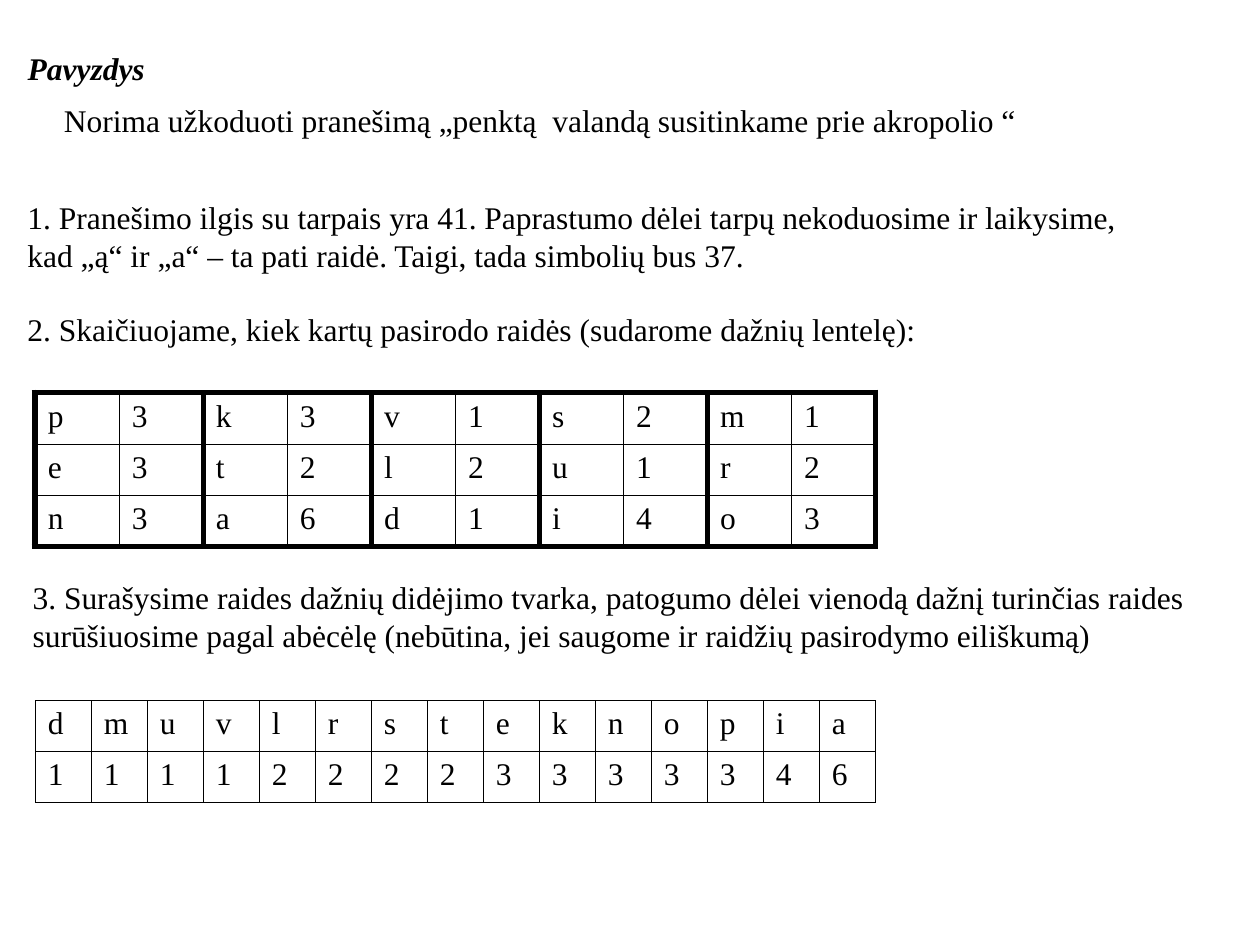
from lxml import etree
from pptx import Presentation
from pptx import util as u
from pptx.dml.color import RGBColor
from pptx.enum import text
from pptx.oxml import ns

FONT, SIZE = "Times New Roman", 18
BLACK, WHITE = "000000", "FFFFFF"
THICK, THIN, HAIRLINE = 3, 1, 0.25

# Content: text with its left, top, width, height in inches
TITLE = ("Pavyzdys", (0.12, 0.34, 8.5, 0.4))
PARAGRAPHS = [
    ("Norima užkoduoti pranešimą „penktą  valandą susitinkame prie akropolio “",
     (0.41, 0.75, 9.06, 0.4)),
    ("1. Pranešimo ilgis su tarpais yra 41. Paprastumo dėlei tarpų nekoduosime ir laikysime, "
     "kad „ą“ ir „a“ – ta pati raidė. Taigi, tada simbolių bus 37.",
     (0.12, 1.52, 9.06, 0.71)),
    ("2. Skaičiuojame, kiek kartų pasirodo raidės (sudarome dažnių lentelę):",
     (0.12, 2.41, 9.06, 0.4)),
    ("3. Surašysime raides dažnių didėjimo tvarka, patogumo dėlei vienodą dažnį turinčias raides "
     "surūšiuosime pagal abėcėlę (nebūtina, jei saugome ir raidžių pasirodymo eiliškumą)",
     (0.16, 4.54, 9.49, 0.71)),
]
# Letters in order of appearance, filled column by column
FREQUENCIES = {"p": 3, "e": 3, "n": 3, "k": 3, "t": 2, "a": 6, "v": 1, "l": 2,
               "d": 1, "s": 2, "u": 1, "i": 4, "m": 1, "r": 2, "o": 3}
LETTER_ROWS = 3
FREQUENCY_BOX = (0.28, 3.12, 6.67, 1.22)
FRAME_BOX = (0.27, 3.11, 6.68, 1.23)
SORTED_BOX = (0.28, 5.56, 6.67, 0.81)


def color(value):
    return RGBColor.from_string(value)


def write(frame, words, emphasis=False):
    run = frame.paragraphs[0].add_run()
    run.text = words
    run.font.name, run.font.size = FONT, u.Pt(SIZE)
    run.font.bold = run.font.italic = emphasis
    run.font.color.rgb = color(BLACK)


def set_up_frame(frame):
    frame.word_wrap = True
    frame.auto_size = text.MSO_AUTO_SIZE.SHAPE_TO_FIT_TEXT
    frame.vertical_anchor = text.MSO_ANCHOR.TOP
    frame.paragraphs[0].alignment = text.PP_ALIGN.LEFT


def set_borders(cell, widths):
    """Widths in points, in the order left, right, top, bottom."""
    properties = cell._tc.get_or_add_tcPr()
    for index, (side, width) in enumerate(zip("LRTB", widths)):
        line = etree.Element(ns.qn(f"a:ln{side}"), w=str(u.Pt(width)))
        fill = etree.SubElement(line, ns.qn("a:solidFill"))
        etree.SubElement(fill, ns.qn("a:srgbClr"), val=BLACK)
        properties.insert(index, line)


def add_grid(slide, rows, box, border_widths):
    """Equal columns and rows; an empty cell (None) stays transparent."""
    row_count, column_count = len(rows), len(rows[0])
    width, height = box[2:]
    table = slide.shapes.add_table(row_count, column_count, *map(u.Inches, box)).table
    table.first_row = table.horz_banding = False
    for column in table.columns:
        column.width = u.Inches(width / column_count)
    for r, row in enumerate(rows):
        table.rows[r].height = u.Inches(height / row_count)
        for c, value in enumerate(row):
            cell = table.cell(r, c)
            if value is None:
                cell.fill.background()
            else:
                cell.fill.solid()
                cell.fill.fore_color.rgb = color(WHITE)
                write(cell.text_frame, str(value))
            set_borders(cell, border_widths(r, c))


def pair_borders(row, column):
    """Thick lines along the top and around the letter-count pairs."""
    return (THICK if column % 2 == 0 else THIN,
            THICK if column % 2 == 1 else THIN,
            THICK if row == 0 else THIN,
            THIN)


def even_borders(width):
    return lambda row, column: (width,) * 4


def main():
    presentation = Presentation()
    presentation.slide_width, presentation.slide_height = u.Inches(10), u.Inches(7.5)
    slide = presentation.slides.add_slide(presentation.slide_layouts[5])

    # Title
    words, box = TITLE
    title = slide.shapes.title
    title.left, title.top, title.width, title.height = map(u.Inches, box)
    set_up_frame(title.text_frame)
    write(title.text_frame, words, emphasis=True)

    # Explanations
    for words, box in PARAGRAPHS:
        frame = slide.shapes.add_textbox(*map(u.Inches, box)).text_frame
        set_up_frame(frame)
        write(frame, words)

    # Frequency table, letter and count side by side, in a one-cell frame
    pairs = list(FREQUENCIES.items())
    frequency_rows = [[value for pair in pairs[r::LETTER_ROWS] for value in pair]
                      for r in range(LETTER_ROWS)]
    add_grid(slide, frequency_rows, FREQUENCY_BOX, pair_borders)
    add_grid(slide, [[None]], FRAME_BOX, even_borders(THICK))

    # Letters sorted by count, then alphabetically
    ordered = sorted(pairs, key=lambda pair: (pair[1], pair[0]))
    add_grid(slide, list(zip(*ordered)), SORTED_BOX, even_borders(HAIRLINE))

    presentation.save("out.pptx")


if __name__ == "__main__":
    main()
